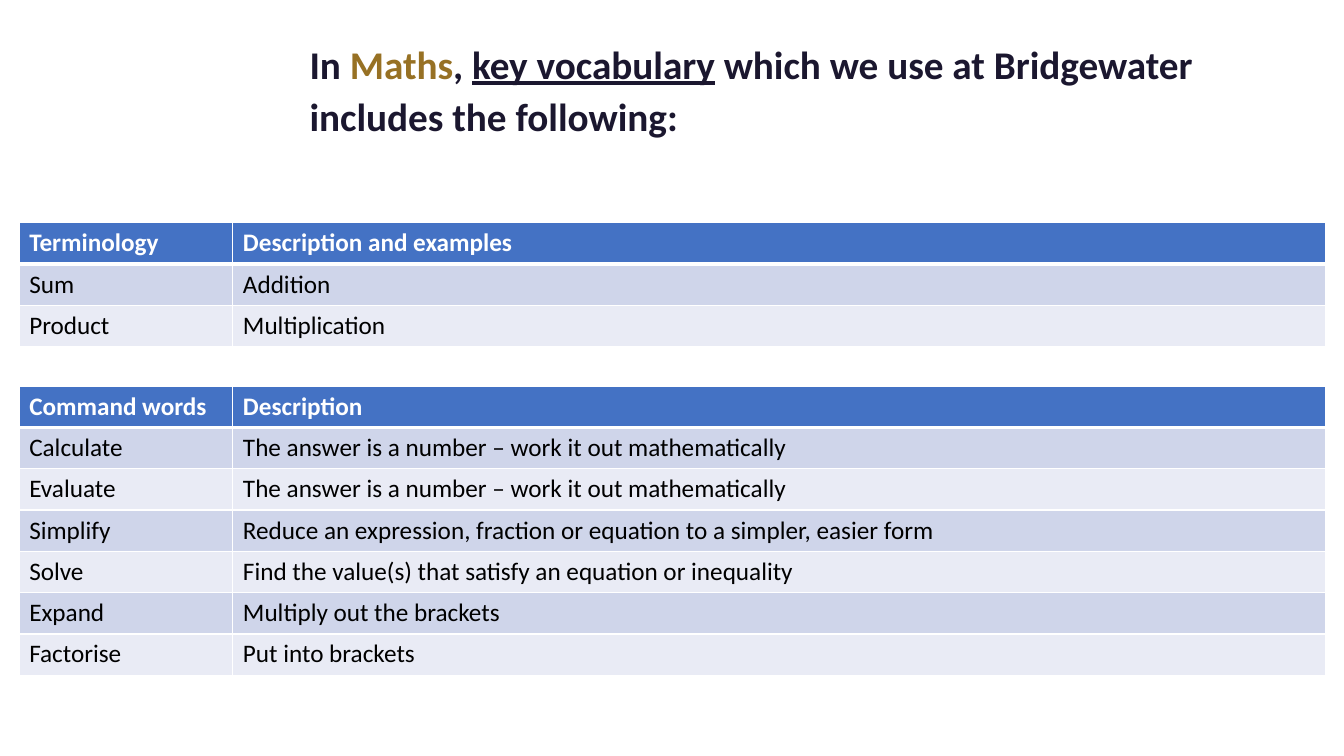
from lxml.etree import SubElement
from pptx import Presentation
from pptx.dml.color import RGBColor
from pptx.enum.text import MSO_ANCHOR, MSO_AUTO_SIZE, PP_ALIGN
from pptx.oxml.ns import qn
from pptx.util import Inches, Pt

INK, GOLD, WHITE, BLACK = "1B172F", "977124", "FFFFFF", "000000"
HEADER_FILL = "4472C4"
BAND_FILLS = ("CFD5EA", "E9EBF5")
COLUMN_WIDTHS = (2.12, 10.84)
ROW_HEIGHT = 0.41

HEADING = [
    ("In ", 28, INK, False),
    ("Maths", 28, GOLD, False),
    (", ", 28, INK, False),
    ("key vocabulary", 28, INK, True),
    (" which we use at Bridgewater includes the following:", 28, INK, False),
    ("\u00a0", 36, INK, False),
]
TERMINOLOGY = [
    ("Terminology", "Description and examples"),
    ("Sum", "Addition"),
    ("Product", "Multiplication"),
]
COMMAND_WORDS = [
    ("Command words", "Description"),
    ("Calculate", "The answer is a number – work it out mathematically"),
    ("Evaluate", "The answer is a number – work it out mathematically"),
    ("Simplify", "Reduce an expression, fraction or equation to a simpler, easier form"),
    ("Solve", "Find the value(s) that satisfy an equation or inequality"),
    ("Expand", "Multiply out the brackets"),
    ("Factorise", "Put into brackets"),
]


def paint(color_format, color):
    """Apply a hex colour to a fill or font colour."""
    color_format.rgb = RGBColor.from_string(color)


def add_run(paragraph, text, size, color, bold=False, underline=False):
    """Add one formatted run of text."""
    run = paragraph.add_run()
    run.text = text
    font = run.font
    font.name, font.size = "Calibri", Pt(size)
    font.bold, font.underline = bold, underline
    paint(font.color, color)


def add_borders(cell, top, bottom):
    """Give a cell white borders, with its top and bottom widths in points."""
    properties = cell._tc.get_or_add_tcPr()
    for side, width in (("L", 1), ("R", 1), ("T", top), ("B", bottom)):
        line = SubElement(properties, qn(f"a:ln{side}"), w=str(Pt(width)))
        line_fill = SubElement(line, qn("a:solidFill"))
        SubElement(line_fill, qn("a:srgbClr"), val=WHITE)


def add_heading(slide, left, top, width, height):
    """Place the heading in the title placeholder."""
    heading = slide.shapes.title
    heading.left, heading.top = Inches(left), Inches(top)
    heading.width, heading.height = Inches(width), Inches(height)
    frame = heading.text_frame
    frame.word_wrap = True
    frame.auto_size = MSO_AUTO_SIZE.NONE
    frame.vertical_anchor = MSO_ANCHOR.BOTTOM
    paragraph = frame.paragraphs[0]
    paragraph.alignment = PP_ALIGN.LEFT
    paragraph.line_spacing = 0.9
    for text, size, color, underline in HEADING:
        add_run(paragraph, text, size, color, True, underline)


def add_glossary(slide, entries, left, top):
    """Place a banded two-column table of words and descriptions."""
    glossary = slide.shapes.add_table(
        len(entries), len(COLUMN_WIDTHS), Inches(left), Inches(top),
        Inches(sum(COLUMN_WIDTHS)), Inches(ROW_HEIGHT * len(entries))).table
    for column, width in zip(glossary.columns, COLUMN_WIDTHS):
        column.width = Inches(width)
    for row_index, entry in enumerate(entries):
        glossary.rows[row_index].height = Inches(ROW_HEIGHT)
        is_header = row_index == 0
        fill = HEADER_FILL if is_header else BAND_FILLS[(row_index - 1) % 2]
        for column_index, text in enumerate(entry):
            cell = glossary.cell(row_index, column_index)
            add_borders(cell, 3 if row_index == 1 else 1, 3 if is_header else 1)
            cell.fill.solid()
            paint(cell.fill.fore_color, fill)
            add_run(cell.text_frame.paragraphs[0], text, 18,
                    WHITE if is_header else BLACK, is_header)


def main():
    """Build and save the vocabulary slide."""
    deck = Presentation()
    deck.slide_width, deck.slide_height = Inches(13.33), Inches(7.5)
    slide = deck.slides.add_slide(deck.slide_layouts[5])
    add_heading(slide, 2.97, -0.19, 10.37, 1.65)
    add_glossary(slide, TERMINOLOGY, 0.19, 2.21)
    add_glossary(slide, COMMAND_WORDS, 0.19, 3.83)
    deck.save("out.pptx")


if __name__ == "__main__":
    main()
